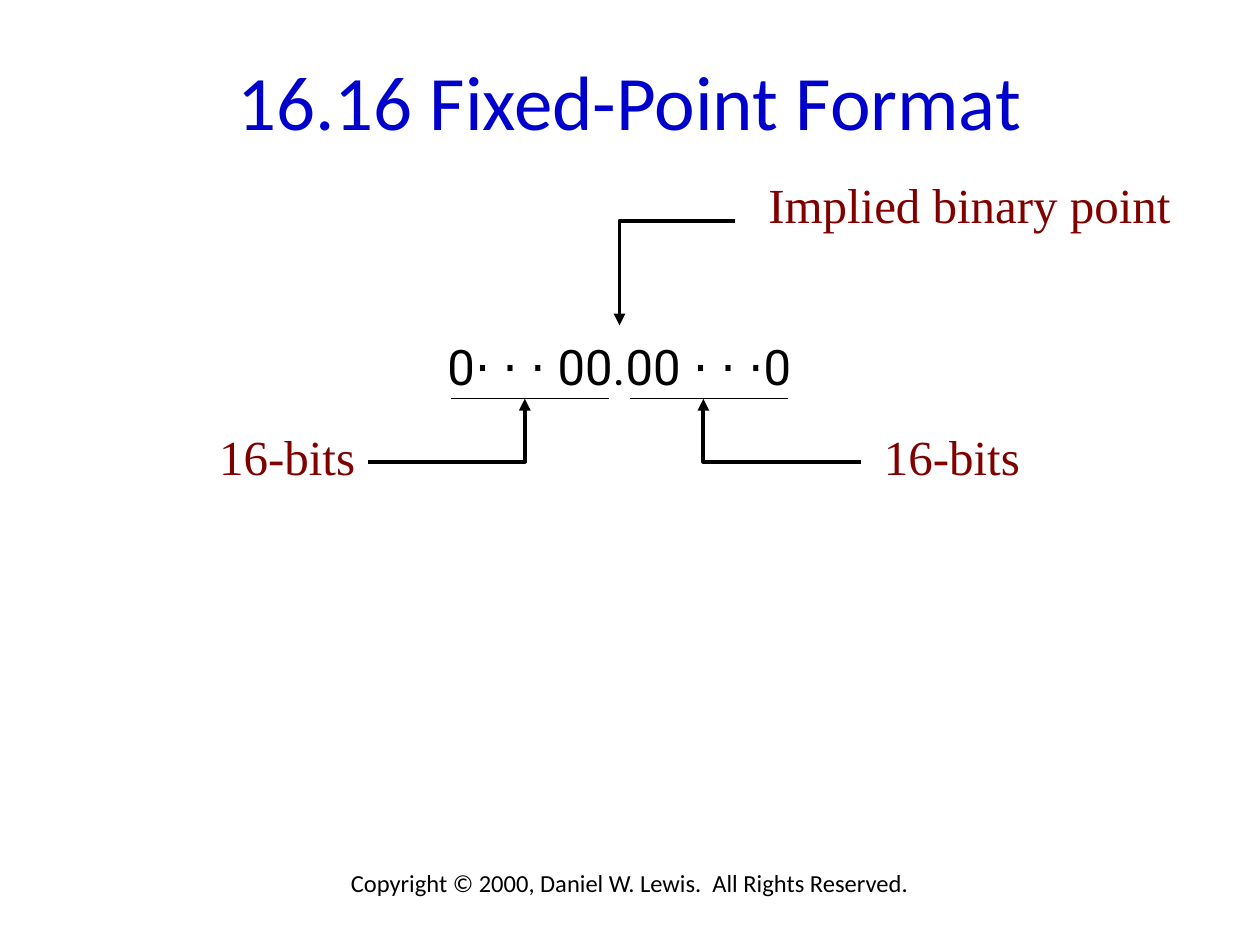
from typing import NamedTuple

from lxml import etree
from pptx import Presentation
from pptx.dml.color import RGBColor
from pptx.enum.shapes import MSO_CONNECTOR
from pptx.enum.text import MSO_ANCHOR, MSO_AUTO_SIZE, PP_ALIGN
from pptx.oxml.ns import qn
from pptx.util import Cm, Pt

LEFT, CENTER, RIGHT = PP_ALIGN.LEFT, PP_ALIGN.CENTER, PP_ALIGN.RIGHT
MIDDLE, TOP = MSO_ANCHOR.MIDDLE, MSO_ANCHOR.TOP
NO_FIT = MSO_AUTO_SIZE.NONE
STRAIGHT = MSO_CONNECTOR.STRAIGHT

COLORS = {"title": "0000CC", "label": "800000", "ink": "000000"}
RULE_Y = 8.04  # underline of both halves
TURN_Y = 9.31  # bend of the arrows below
RULE_W = 3.18


class Look(NamedTuple):
    font: str
    size: int
    color: str


class Label(NamedTuple):
    text: str
    box: tuple[float, float, float, float]
    look: Look
    align: PP_ALIGN
    inset: float = 0.13


class Arrow(NamedTuple):
    """Bent arrow: head at tip, one turn, then out to the end."""
    tip: tuple[float, float]
    turn_y: float
    end_x: float


TITLE = Look("Calibri", 44, "title")
NOTE = Look("Times New Roman", 28, "label")
DIGITS = Look("Roboto", 28, "ink")
FOOT = Look("Calibri", 14, "ink")

HEADING = Label("16.16 Fixed-Point Format", (1.9, 0.42, 21.59, 3.18), TITLE, CENTER)
LABELS = [
    Label("Copyright © 2000, Daniel W. Lewis.  All Rights Reserved.",
          (1.9, 17.36, 21.59, 1.27), FOOT, CENTER),
    Label("0⋅ ⋅ ⋅ 00.00 ⋅ ⋅ ⋅0", (1.69, 5.29, 21.59, 5.08), DIGITS, CENTER, 1.5),
    Label("16-bits", (1.69, 8.47, 5.72, 1.45), NOTE, RIGHT),
    Label("16-bits", (17.57, 8.47, 6.77, 1.45), NOTE, LEFT),
    Label("Implied binary point", (15.24, 3.39, 9.1, 1.45), NOTE, LEFT),
]
RULES = [9.1, 12.7]
ARROWS = [
    Arrow((10.58, RULE_Y), TURN_Y, 7.41),
    Arrow((12.49, 6.56), 4.45, 14.82),
    Arrow((14.18, RULE_Y), TURN_Y, 17.36),
]


def apply(target, values: dict) -> None:
    for name, value in values.items():
        setattr(target, name, value)


def paint(color, name: str) -> None:
    color.rgb = RGBColor.from_string(COLORS[name])


def write(shape, label: Label, anchor: MSO_ANCHOR) -> None:
    """Place a text shape and fill it with one formatted line."""
    left, top, width, height = map(Cm, label.box)
    apply(shape, {"left": left, "top": top, "width": width, "height": height})
    frame = shape.text_frame
    apply(frame, {"word_wrap": True, "auto_size": NO_FIT,
                  "vertical_anchor": anchor, "margin_top": Cm(label.inset)})
    line = frame.paragraphs[0]
    line.alignment = label.align
    run = line.add_run()
    run.text = label.text
    apply(run.font, {"name": label.look.font, "size": Pt(label.look.size)})
    paint(run.font.color, label.look.color)


def draw_rule(shapes, left: float) -> None:
    rule = shapes.add_connector(STRAIGHT, Cm(left), Cm(RULE_Y),
                                Cm(left + RULE_W), Cm(RULE_Y))
    rule.line.width = Pt(0.75)
    paint(rule.line.color, "ink")
    etree.SubElement(rule.line._get_or_add_ln().getparent(), qn("a:effectLst"))


def draw_arrow(shapes, arrow: Arrow) -> None:
    x, y = map(Cm, arrow.tip)
    turn, end = Cm(arrow.turn_y), Cm(arrow.end_x)
    pen = shapes.build_freeform(x, y)
    pen.add_line_segments([(x, turn), (end, turn)], close=False)
    shape = pen.convert_to_shape()
    shape.shadow.inherit = False
    shape.fill.background()
    shape.line.width = Pt(2.25)
    paint(shape.line.color, "ink")
    etree.SubElement(shape.line._get_or_add_ln(), qn("a:headEnd"), type="triangle")


def main() -> None:
    deck = Presentation()
    apply(deck, {"slide_width": Cm(25.4), "slide_height": Cm(19.05)})
    shapes = deck.slides.add_slide(deck.slide_layouts[5]).shapes
    write(shapes.title, HEADING, MIDDLE)
    for left in RULES:
        draw_rule(shapes, left)
    for arrow in ARROWS:
        draw_arrow(shapes, arrow)
    for label in LABELS:
        write(shapes.add_textbox(0, 0, 0, 0), label, TOP)
    deck.save("out.pptx")


if __name__ == "__main__":
    main()
